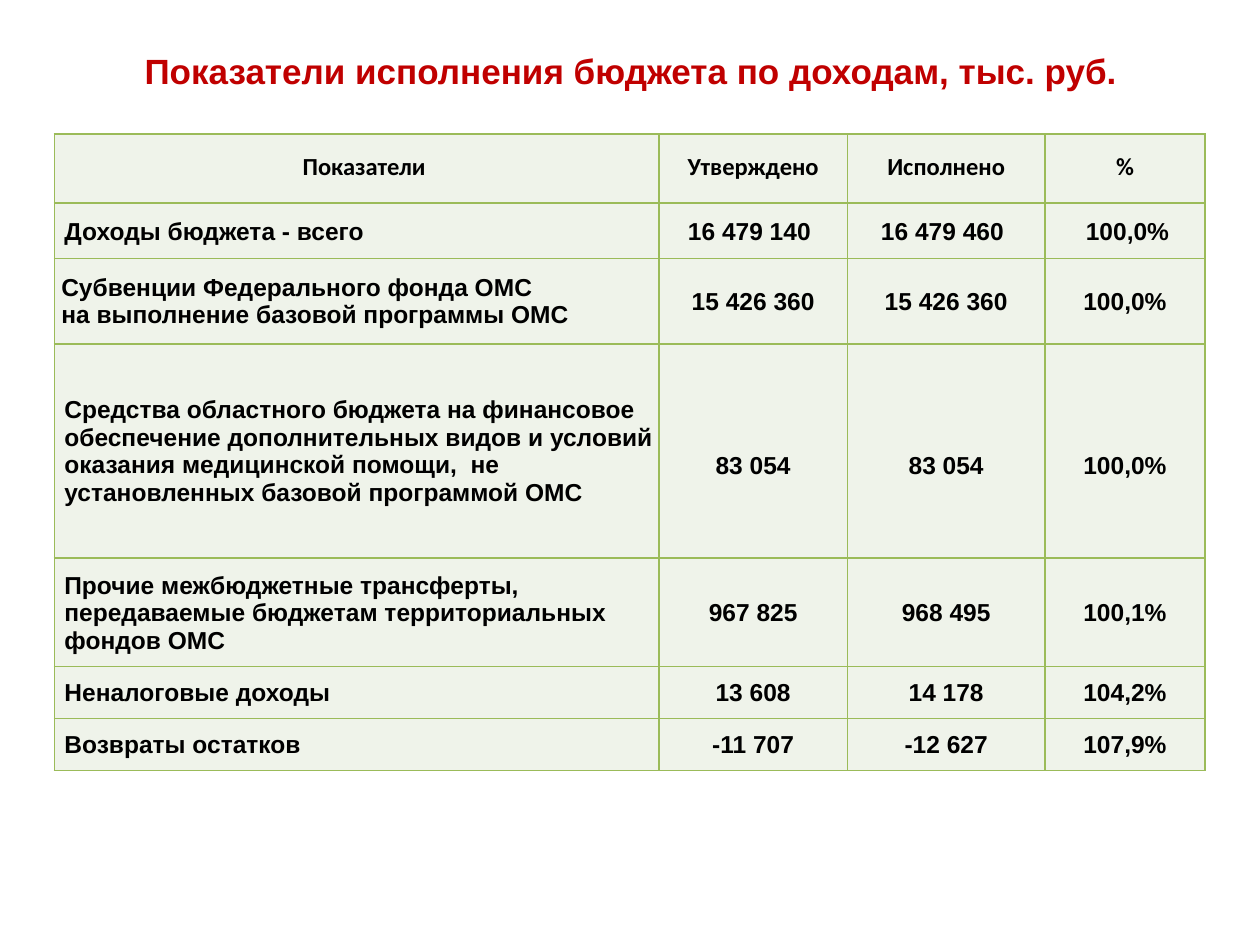
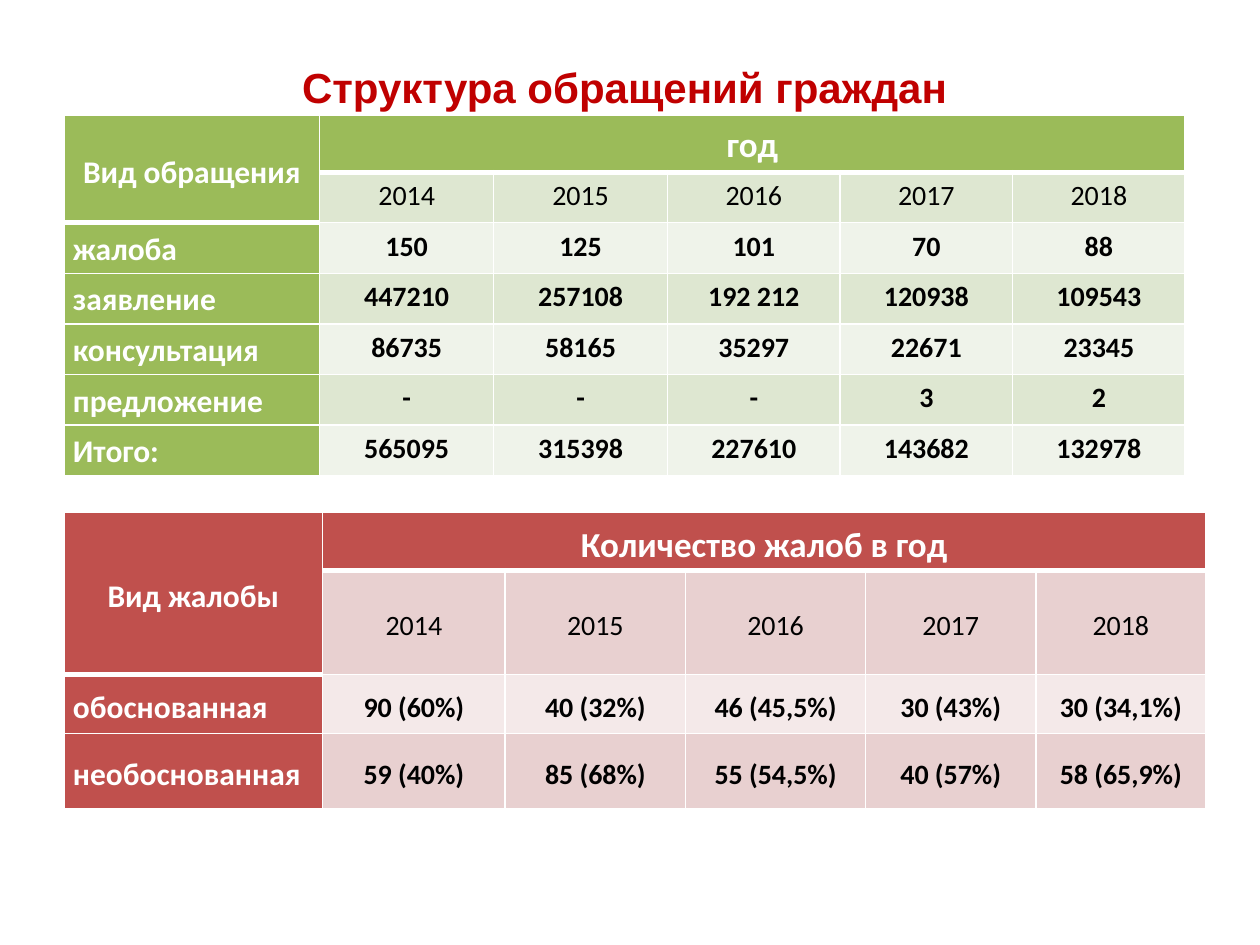
from dataclasses import dataclass, replace

import pptx
import pptx.dml.color
import pptx.enum.text
import pptx.oxml
import pptx.oxml.ns
import pptx.util
from lxml import etree

Pt = pptx.util.Pt
RGBColor = pptx.dml.color.RGBColor
Align = pptx.enum.text.PP_ALIGN
Anchor = pptx.enum.text.MSO_ANCHOR

TITLE_RED = RGBColor(0xC0, 0x00, 0x00)
BLACK = RGBColor(0x00, 0x00, 0x00)
WHITE = RGBColor(0xFF, 0xFF, 0xFF)
GREEN = RGBColor(0x9B, 0xBB, 0x59)
GREEN_BAND = RGBColor(0xDE, 0xE7, 0xD1)
GREEN_PALE = RGBColor(0xEF, 0xF3, 0xEA)
RED = RGBColor(0xC0, 0x50, 0x4D)
RED_BAND = RGBColor(0xE8, 0xD0, 0xD0)
RED_PALE = RGBColor(0xF4, 0xE9, 0xE9)

THIN, THICK = 1, 3


@dataclass(frozen=True)
class CellStyle:
    font: str
    size: float
    fill: RGBColor
    color: RGBColor = BLACK
    bold: bool = True
    align: Align = Align.CENTER
    anchor: Anchor = Anchor.MIDDLE
    spacing: float = 1.0
    insets: tuple[float, float, float, float] = (0.7, 0.7, 0.7, 0)  # left, top, right, bottom


@dataclass(frozen=True)
class Grid:
    left: float
    top: float
    widths: tuple[float, ...]
    heights: tuple[float, ...]


@dataclass(frozen=True)
class YearTable:
    """Table with a corner heading, a spanning heading, years and labelled rows."""
    grid: Grid
    corner: str
    heading: str
    rows: tuple[tuple[str, ...], ...]
    accent: RGBColor
    band: RGBColor
    pale: RGBColor
    anchor: Anchor


YEARS = ("2014", "2015", "2016", "2017", "2018")

INCOME_GRID = Grid(31, 76.5, (345.6, 107.6, 113, 91.4),
                   (39.6, 31.7, 48.8, 122.4, 62, 29.6, 29.6))
INCOME_ROWS = (
    ("Показатели", "Утверждено", "Исполнено", "%"),
    ("Доходы бюджета - всего", "16 479 140", "16 479 460", "100,0%"),
    ("Субвенции Федерального фонда ОМС\nна выполнение базовой программы ОМС",
     "15 426 360", "15 426 360", "100,0%"),
    ("Средства областного бюджета на финансовое обеспечение дополнительных видов "
     "и условий оказания медицинской помощи,  не установленных базовой программой ОМС",
     "83 054", "83 054", "100,0%"),
    ("Прочие межбюджетные трансферты, передаваемые бюджетам территориальных фондов ОМС",
     "967 825", "968 495", "100,1%"),
    ("Неналоговые доходы", "13 608", "14 178", "104,2%"),
    ("Возвраты остатков", "-11 707", "-12 627", "107,9%"),
)

APPEALS = YearTable(
    Grid(36.7, 66, (146, 99.4, 99.4, 98.6, 98.6, 98.6), (32.4,) + (28.9,) * 6),
    "Вид обращения", "год",
    (("жалоба", "150", "125", "101", "70", "88"),
     ("заявление", "447210", "257108", "192 212", "120938", "109543"),
     ("консультация", "86735", "58165", "35297", "22671", "23345"),
     ("предложение", "-", "-", "-", "3", "2"),
     ("Итого:", "565095", "315398", "227610", "143682", "132978")),
    GREEN, GREEN_BAND, GREEN_PALE, Anchor.TOP)

COMPLAINTS = YearTable(
    Grid(36.7, 292.5, (147.6, 104.4, 103, 103, 97.2, 97.2), (33.4, 59.6, 33.8, 43)),
    "Вид жалобы", "Количество жалоб в год",
    (("обоснованная", "90 (60%)", "40 (32%)", "46 (45,5%)", "30 (43%)", "30 (34,1%)"),
     ("необоснованная", "59 (40%)", "85 (68%)", "55 (54,5%)", "40 (57%)", "58 (65,9%)")),
    RED, RED_BAND, RED_PALE, Anchor.MIDDLE)


def add_titled_slide(prs, title: str, size: float, box: tuple[float, float, float, float]):
    s = prs.slides.add_slide(prs.slide_layouts[5])
    sp = s.shapes.title
    sp.left, sp.top, sp.width, sp.height = map(Pt, box)
    tf = sp.text_frame
    tf.text = title
    tf.vertical_anchor = Anchor.MIDDLE
    p = tf.paragraphs[0]
    p.alignment = Align.CENTER
    font = p.runs[0].font
    font.name, font.size, font.bold = "Arial", Pt(size), True
    font.color.rgb = TITLE_RED
    return s


def add_grid(s, grid: Grid):
    table = s.shapes.add_table(
        len(grid.heights), len(grid.widths), Pt(grid.left), Pt(grid.top),
        Pt(sum(grid.widths)), Pt(sum(grid.heights))).table
    table.first_row = table.horz_banding = False
    for column, width in zip(table.columns, grid.widths):
        column.width = Pt(width)
    for row, height in zip(table.rows, grid.heights):
        row.height = Pt(height)
    return table


def fill_cell(cell, text: str, style: CellStyle) -> None:
    cell.fill.solid()
    cell.fill.fore_color.rgb = style.fill
    cell.vertical_anchor = style.anchor
    (cell.margin_left, cell.margin_top,
     cell.margin_right, cell.margin_bottom) = map(Pt, style.insets)
    cell.text_frame.text = text
    for p in cell.text_frame.paragraphs:
        p.alignment = style.align
        p.line_spacing = style.spacing
        for r in p.runs:
            r.font.name, r.font.size, r.font.bold = style.font, Pt(style.size), style.bold
            r.font.color.rgb = style.color


def set_borders(cell, color: RGBColor, top: float = THIN, bottom: float = THIN) -> None:
    tc_pr = cell._tc.get_or_add_tcPr()
    sides = (("L", THIN), ("R", THIN), ("T", top), ("B", bottom))
    for i, (side, width) in enumerate(sides):
        line = etree.Element(pptx.oxml.ns.qn(f"a:ln{side}"), w=str(Pt(width)))
        fill = etree.SubElement(line, pptx.oxml.ns.qn("a:solidFill"))
        etree.SubElement(fill, pptx.oxml.ns.qn("a:srgbClr"), val=str(color))
        tc_pr.insert(i, line)


def add_income_table(s) -> None:
    header = CellStyle("Calibri", 14, GREEN_PALE, spacing=0.8, insets=(7.2, 3.6, 7.2, 3.6))
    number = CellStyle("Arial", 14, GREEN_PALE)
    label = replace(number, align=Align.LEFT, insets=(5.8, 0.7, 0.7, 0))
    special = {
        (0, 0): replace(header, insets=(15.8, 3.6, 7.2, 3.6)),
        (1, 1): replace(number, insets=(0.7, 0.7, 5, 0)),
        (1, 2): replace(number, insets=(0.7, 0.7, 5, 0)),
        (1, 3): replace(number, insets=(3.5, 0.7, 0.7, 0)),
        (2, 0): replace(label, insets=(4, 0, 0, 0)),
    }
    special |= {(3, c): replace(number, insets=(0.7, 17, 0.7, 0)) for c in (1, 2, 3)}
    table = add_grid(s, INCOME_GRID)
    for r, texts in enumerate(INCOME_ROWS):
        for c, text in enumerate(texts):
            usual = header if r == 0 else number if c else label
            fill_cell(table.cell(r, c), text, special.get((r, c), usual))
            set_borders(table.cell(r, c), GREEN)


def add_year_table(s, spec: YearTable) -> None:
    value = CellStyle("Calibri", 16, spec.pale, anchor=spec.anchor, spacing=1.2,
                      insets=(5, 0, 5, 0))
    year = replace(value, fill=spec.band, bold=False)
    heading = replace(value, size=20, fill=spec.accent, color=WHITE)
    corner = replace(heading, size=18, anchor=Anchor.MIDDLE)
    label = replace(heading, size=18, align=Align.LEFT)

    def rule_below(r: int, c: int) -> float:
        return THICK if r == 0 or (r, c) == (1, 0) else THIN

    table = add_grid(s, spec.grid)
    table.cell(0, 0).merge(table.cell(1, 0))
    table.cell(0, 1).merge(table.cell(0, len(YEARS)))
    fill_cell(table.cell(0, 0), spec.corner, corner)
    fill_cell(table.cell(0, 1), spec.heading, heading)
    for c, text in enumerate(YEARS, 1):
        fill_cell(table.cell(1, c), text, year)
    for r, texts in enumerate(spec.rows, 2):
        fill = spec.band if r % 2 else spec.pale
        for c, text in enumerate(texts):
            fill_cell(table.cell(r, c), text, replace(value, fill=fill) if c else label)
    for r in range(len(spec.grid.heights)):
        for c in range(len(spec.grid.widths)):
            top = rule_below(r - 1, c) if r else THIN
            set_borders(table.cell(r, c), WHITE, top, rule_below(r, c))


def main() -> None:
    prs = pptx.Presentation()
    prs.slide_width, prs.slide_height = Pt(720), Pt(540)

    s = add_titled_slide(prs, "Показатели исполнения бюджета по доходам, тыс. руб.", 20,
                         (36.5, 18, 648, 45))
    add_income_table(s)

    s = add_titled_slide(prs, "Структура обращений граждан", 24, (33, 22, 648, 55))
    add_year_table(s, APPEALS)
    add_year_table(s, COMPLAINTS)

    prs.save("out.pptx")


if __name__ == "__main__":
    main()
